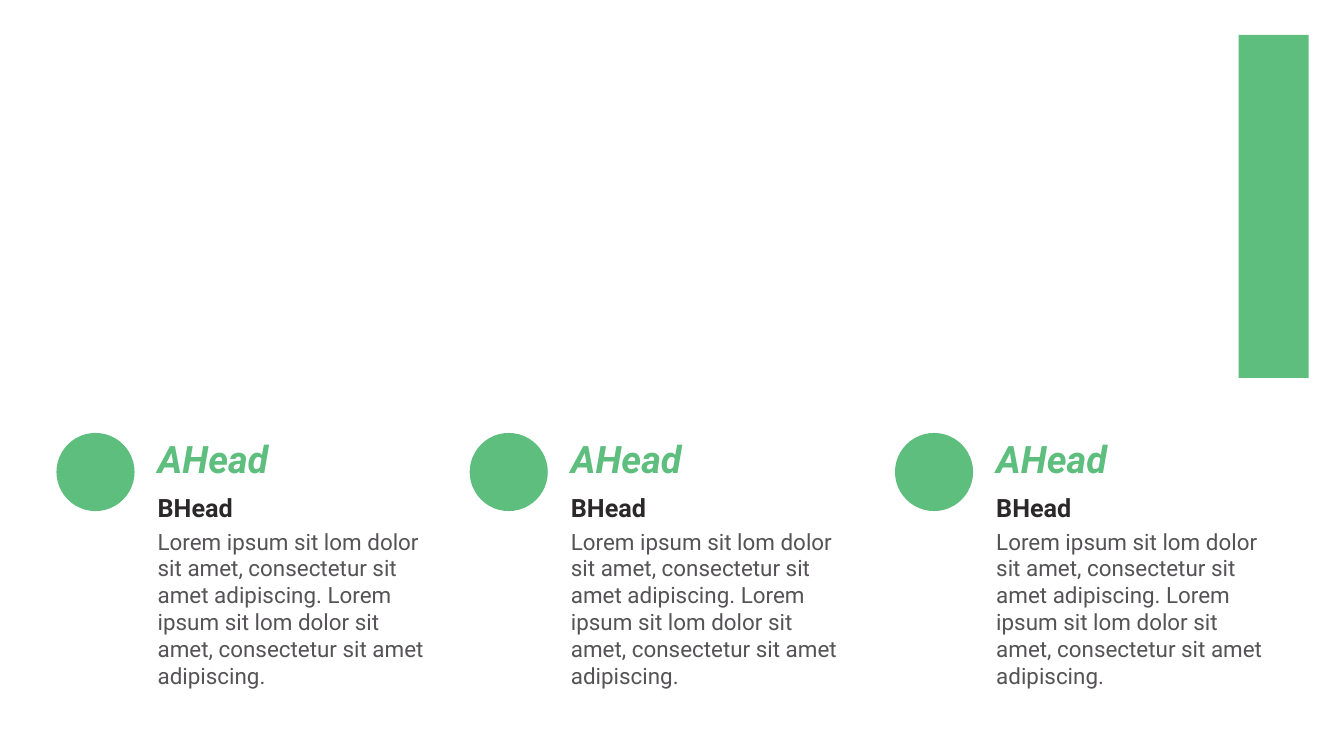
from dataclasses import dataclass

import pptx
import pptx.dml.color
import pptx.enum.shapes
import pptx.enum.text
import pptx.util

EMU_PER_PX = 9144
SHAPE = pptx.enum.shapes.MSO_SHAPE
ANCHOR = pptx.enum.text.MSO_ANCHOR
AUTO_SIZE = pptx.enum.text.MSO_AUTO_SIZE


@dataclass(frozen=True)
class Theme:
    font: str = "Roboto"
    accent: str = "5EBE7E"
    heading: str = "2B282A"
    body: str = "555355"
    title_size: int = 54
    heading_size: int = 36
    body_size: int = 32


def px(*lengths):
    return [pptx.util.Emu(n * EMU_PER_PX) for n in lengths]


def rgb(color):
    return pptx.dml.color.RGBColor.from_string(color)


def write(tf, text, *, font, size, color, bold=False, italic=False):
    r = tf.paragraphs[0].add_run()
    r.text = text
    r.font.name = font
    r.font.size = pptx.util.Pt(size)
    r.font.color.rgb = rgb(color)
    r.font.bold = bold
    r.font.italic = italic


class Builder:
    def __init__(self, s, theme):
        self.s = s
        self.theme = theme

    def shape(self, kind, x, y, w, h):
        sp = self.s.shapes.add_shape(kind, *px(x, y, w, h))
        sp.shadow.inherit = False
        sp.fill.solid()
        sp.fill.fore_color.rgb = rgb(self.theme.accent)
        sp.line.fill.background()

    def text(self, text, x, y, w, h, anchor=ANCHOR.MIDDLE, **style):
        tf = self.s.shapes.add_textbox(*px(x, y, w, h)).text_frame
        tf.word_wrap = True
        tf.auto_size = AUTO_SIZE.SHAPE_TO_FIT_TEXT
        tf.vertical_anchor = anchor
        write(tf, text, font=self.theme.font, **style)

    def column(self, x, title, heading, body):
        t = self.theme
        text_x, text_w = x + 191, 575
        self.shape(SHAPE.OVAL, x, 859, 155, 155)
        self.text(title, text_x, 859, text_w, 101,
                  size=t.title_size, color=t.accent, bold=True, italic=True)
        self.text(heading, text_x, 971, text_w, 71,
                  size=t.heading_size, color=t.heading, bold=True)
        self.text(body, text_x, 1042, text_w, 333, anchor=ANCHOR.TOP,
                  size=t.body_size, color=t.body)


def main():
    prs = pptx.Presentation()
    prs.slide_width, prs.slide_height = px(2667, 1500)
    s = prs.slides.add_slide(prs.slide_layouts[6])
    builder = Builder(s, Theme())

    builder.shape(SHAPE.RECTANGLE, 2458, 69, 139, 681)
    sentence = "Lorem ipsum sit lom dolor sit amet, consectetur sit amet adipiscing."
    for x in (112, 932, 1776):
        builder.column(x, "AHead", "BHead", f"{sentence} {sentence}")

    prs.save("out.pptx")


if __name__ == "__main__":
    main()
